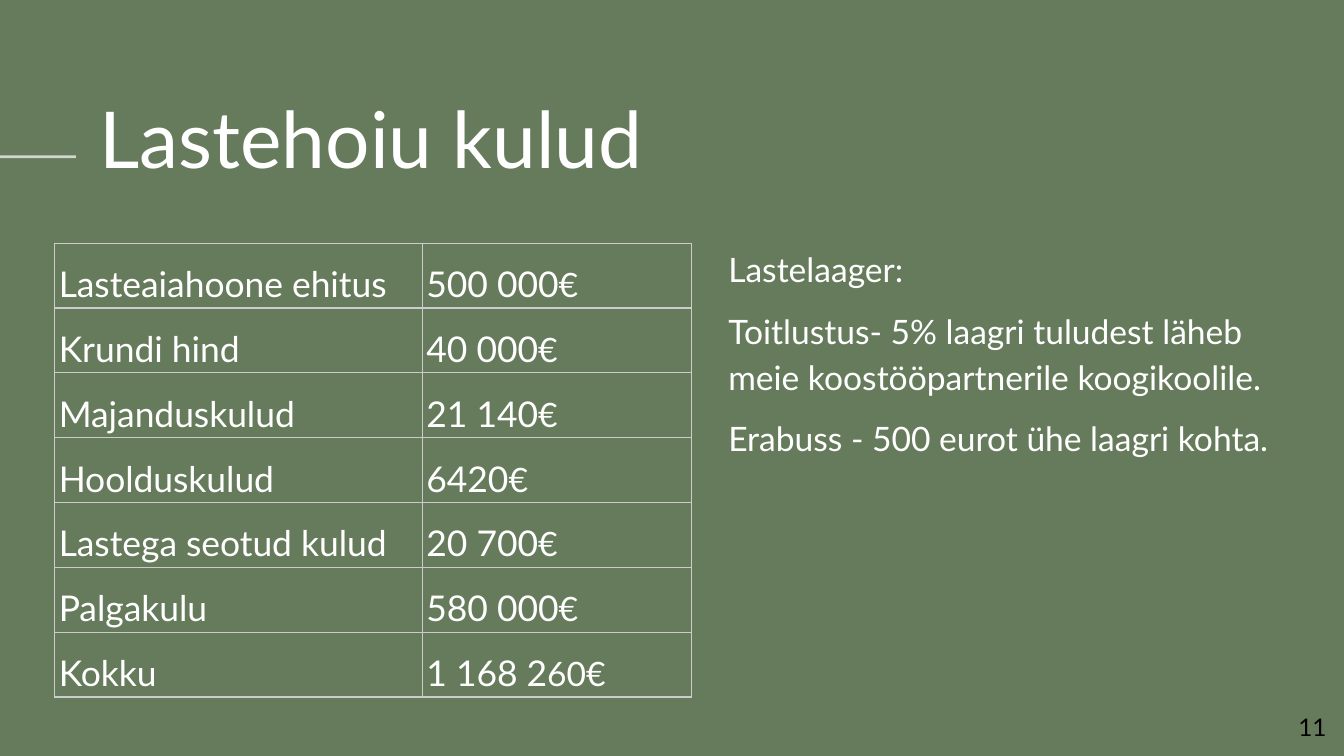
from dataclasses import dataclass

from lxml.etree import SubElement
from pptx import Presentation
from pptx.dml.color import RGBColor
from pptx.enum.shapes import MSO_CONNECTOR
from pptx.enum.text import MSO_ANCHOR, MSO_AUTO_SIZE, PP_ALIGN
from pptx.oxml.ns import qn
from pptx.util import Pt


@dataclass(frozen=True)
class Theme:
    font: str = "Lato"
    background: str = "667B5C"
    light: str = "FFFFFF"
    dark: str = "000000"
    border: str = "CCCCCC"
    title_size: float = 42
    cell_size: float = 19
    body_size: float = 18
    number_size: float = 13
    line_spacing: float = 1.15


THEME = Theme()

COSTS = [
    ("Lasteaiahoone ehitus", "500 000", "€"),
    ("Krundi hind", "40 000", "€"),
    ("Majanduskulud", "21 140", "€"),
    ("Hoolduskulud", "6420", "€"),
    ("Lastega seotud kulud", "20 700", "€"),
    ("Palgakulu", "580 000", "€"),
    ("Kokku", "1 168 2", "60€"),
]
CAMP_NOTES = [
    "Lastelaager:",
    "Toitlustus- 5% laagri tuludest läheb meie koostööpartnerile koogikoolile.",
    "Erabuss - 500 eurot ühe laagri kohta.",
]


def style_font(font, size, color=THEME.light):
    font.name = THEME.font
    font.size = Pt(size)
    font.color.rgb = RGBColor.from_string(color)


def place(shape, left, top, width, height):
    shape.left, shape.top = Pt(left), Pt(top)
    shape.width, shape.height = Pt(width), Pt(height)


def prepare_frame(frame, anchor):
    frame.word_wrap = True
    frame.auto_size = MSO_AUTO_SIZE.NONE
    frame.vertical_anchor = anchor
    frame.margin_left = frame.margin_right = Pt(0)
    frame.margin_top = frame.margin_bottom = Pt(0)


def set_title(slide, text):
    title = slide.shapes.title
    place(title, 53.3, 68.4, 585.4, 31)
    prepare_frame(title.text_frame, MSO_ANCHOR.BOTTOM)
    title.text_frame.text = text
    paragraph = title.text_frame.paragraphs[0]
    paragraph.alignment = PP_ALIGN.LEFT
    paragraph.line_spacing = 0.9
    style_font(paragraph.font, THEME.title_size)


def add_text(slide, box, lines, size, color=THEME.light, anchor=MSO_ANCHOR.TOP,
             alignment=PP_ALIGN.LEFT, line_spacing=1.0, gap=0):
    frame = slide.shapes.add_textbox(*map(Pt, box)).text_frame
    prepare_frame(frame, anchor)
    for index, line in enumerate(lines):
        paragraph = frame.add_paragraph() if index else frame.paragraphs[0]
        paragraph.text = line
        paragraph.alignment = alignment
        paragraph.line_spacing = line_spacing
        paragraph.space_before = Pt(gap if index else 0)
        style_font(paragraph.font, size, color)


def add_accent_line(slide, left, right, top):
    line = slide.shapes.add_connector(
        MSO_CONNECTOR.STRAIGHT, Pt(left), Pt(top), Pt(right), Pt(top))
    line.line.width = Pt(1.5)
    line.line.color.rgb = RGBColor.from_string(THEME.light)
    # Partial transparency, and no inherited shadow
    properties = line._element.spPr
    color = properties.find(".//" + qn("a:srgbClr"))
    SubElement(color, qn("a:alpha"), val="70000")
    SubElement(properties, qn("a:effectLst"))


def set_borders(cell):
    properties = cell._tc.get_or_add_tcPr()
    for position, side in enumerate(("lnL", "lnR", "lnT", "lnB")):
        border = SubElement(properties, qn("a:" + side), w=str(Pt(0.75)))
        fill = SubElement(border, qn("a:solidFill"))
        SubElement(fill, qn("a:srgbClr"), val=THEME.border)
        properties.insert(position, border)


def fill_cell(cell, parts):
    """Write the parts of a cell; any part after the first is in body size."""
    cell.fill.background()
    cell.vertical_anchor = MSO_ANCHOR.BOTTOM
    cell.margin_left = cell.margin_right = Pt(2.2)
    cell.margin_top = cell.margin_bottom = Pt(1.5)
    paragraph = cell.text_frame.paragraphs[0]
    paragraph.line_spacing = THEME.line_spacing
    for index, part in enumerate(parts):
        run = paragraph.add_run()
        run.text = part
        style_font(run.font, THEME.body_size if index else THEME.cell_size)
    set_borders(cell)


def add_cost_table(slide, left, top, column_widths, row_height, costs):
    table = slide.shapes.add_table(
        len(costs), len(column_widths), Pt(left), Pt(top),
        Pt(sum(column_widths)), Pt(row_height * len(costs))).table
    table.first_row = table.horz_banding = False
    for column, width in zip(table.columns, column_widths):
        column.width = Pt(width)
    for row, (label, *amount) in zip(table.rows, costs):
        row.height = Pt(row_height)
        fill_cell(row.cells[0], [label])
        fill_cell(row.cells[1], amount)


def main():
    presentation = Presentation()
    presentation.slide_width, presentation.slide_height = Pt(720), Pt(405)
    slide = presentation.slides.add_slide(presentation.slide_layouts[5])
    slide.background.fill.solid()
    slide.background.fill.fore_color.rgb = RGBColor.from_string(THEME.background)

    # Heading with its accent line
    add_accent_line(slide, 0, 40.6, 84)
    set_title(slide, "Lastehoiu kulud")

    # Page number
    add_text(slide, (667.4, 373.7, 43.2, 31), ["11"], THEME.number_size,
             THEME.dark, MSO_ANCHOR.MIDDLE, PP_ALIGN.RIGHT)

    # Camp notes beside the cost table
    add_text(slide, (390.2, 130.3, 297.4, 212.4), CAMP_NOTES, THEME.body_size,
             line_spacing=THEME.line_spacing, gap=8)
    add_cost_table(slide, 29.3, 130.3, (197, 144), 34.75, COSTS)

    presentation.save("out.pptx")


if __name__ == "__main__":
    main()
